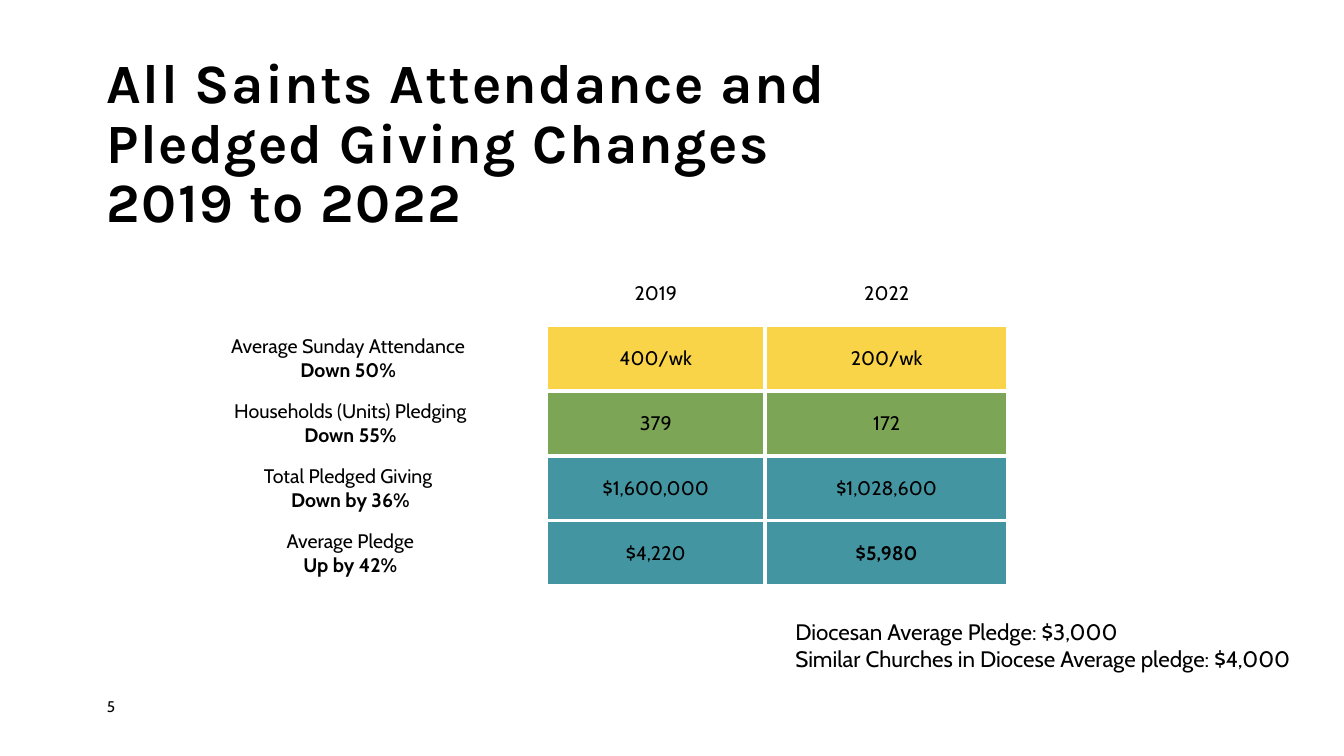
import pptx
import pptx.util
import pptx.dml.color
import pptx.enum.text
import pptx.oxml
import pptx.oxml.ns
import lxml.etree

Inches = pptx.util.Inches
ANCHOR = pptx.enum.text.MSO_ANCHOR
ALIGN = pptx.enum.text.PP_ALIGN

# Content
TITLE = "All Saints Attendance and \vPledged Giving Changes\v2019 to 2022"
PAGE_NUMBER = "5"
NOTES = ["Diocesan Average Pledge: $3,000",
         "Similar Churches in Diocese Average pledge: $4,000"]
# Each row: fill, then the lines of each cell
ROWS = [
    (None, [[], ["2019"], ["2022"]]),
    ("yellow", [["Average Sunday Attendance ", "Down 50% "], ["400/wk"], ["200/wk"]]),
    ("green", [["Households (Units) Pledging", "Down 55%"], ["379"], ["172"]]),
    ("teal", [["Total Pledged Giving ", "Down by 36%"], ["$1,600,000"], ["$1,028,600"]]),
    ("teal", [["Average Pledge", "Up by 42%"], ["$4,220"], ["$5,980"]]),
]
BOLD_VALUES = {"$5,980"}
COLUMN_WIDTHS = [3.89, 2.17, 2.41]
ROW_HEIGHT = 0.644

# Formats
COLOURS = {"black": "000000", "white": "FFFFFF", "yellow": "F9D448",
           "green": "7CA655", "teal": "4495A2"}
FORMATS = {
    "title": {"name": "Karla", "size": pptx.util.Pt(39.6), "bold": True},
    "cell": {"name": "Cabin", "size": pptx.util.Pt(14), "bold": False},
    "strong": {"name": "Cabin", "size": pptx.util.Pt(14), "bold": True},
    "page": {"name": "Cabin", "size": pptx.util.Pt(11)},
    "note": {"name": "Cabin", "size": pptx.util.Pt(16)},
}


def colour(name):
    return pptx.dml.color.RGBColor.from_string(COLOURS[name])


def write(frame, lines, styles, align=ALIGN.LEFT):
    for index, (line, style) in enumerate(zip(lines, styles)):
        para = frame.paragraphs[0] if index == 0 else frame.add_paragraph()
        para.text = line
        para.alignment = align
        for span in para.runs:
            for key, value in FORMATS[style].items():
                setattr(span.font, key, value)
            span.font.color.rgb = colour("black")
    return frame


def add_text(page, place, lines, style, margin=None, anchor=ANCHOR.TOP):
    box = page.shapes.add_textbox(*map(Inches, place))
    frame = box.text_frame
    frame.word_wrap = True
    frame.vertical_anchor = anchor
    if margin is not None:
        for side in ("left", "top", "right", "bottom"):
            setattr(frame, f"margin_{side}", Inches(margin))
    return write(frame, lines, [style] * len(lines))


def set_borders(cell, widths):
    """Widths in points for the left, right, top and bottom edges."""
    properties = cell._tc.get_or_add_tcPr()
    for index, (side, width) in enumerate(zip("LRTB", widths)):
        properties.insert(index, pptx.oxml.parse_xml(
            f'<a:ln{side} {pptx.oxml.ns.nsdecls("a")} w="{int(width * 12700)}">'
            f'<a:solidFill><a:srgbClr val="{COLOURS["white"]}"/></a:solidFill></a:ln{side}>'))


def add_giving_table(page):
    frame = page.shapes.add_table(
        len(ROWS), len(COLUMN_WIDTHS), Inches(1.53), Inches(2.59),
        Inches(sum(COLUMN_WIDTHS)), Inches(ROW_HEIGHT * len(ROWS)))
    table = frame.table
    table.first_row = table.horz_banding = False
    for column, width in zip(table.columns, COLUMN_WIDTHS):
        column.width = Inches(width)
    last = len(ROWS) - 1
    for r, (fill, cells) in enumerate(ROWS):
        table.rows[r].height = Inches(ROW_HEIGHT)
        for c, lines in enumerate(cells):
            cell = table.cell(r, c)
            cell.vertical_anchor = ANCHOR.MIDDLE
            if fill and c > 0:
                cell.fill.solid()
                cell.fill.fore_color.rgb = colour(fill)
            else:
                cell.fill.background()
            # Thin header edges, thick lines between the values
            if r == 0:
                widths = (1, 1, 1, 2.25)
            elif c == 0:
                widths = (2.25,) * 4
            else:
                widths = (2.25 if c == 1 else 3, 3,
                          2.25 if r == 1 else 3, 2.25 if r == last else 3)
            set_borders(cell, widths)
            styles = ["strong" if i > 0 or line in BOLD_VALUES else "cell"
                      for i, line in enumerate(lines)]
            write(cell.text_frame, lines, styles, ALIGN.CENTER)


def main():
    deck = pptx.Presentation()
    deck.slide_width, deck.slide_height = Inches(13.33), Inches(7.5)
    page = deck.slides.add_slide(deck.slide_layouts[6])

    # Title with tight lines and open letters
    title = add_text(page, (1.06, 0.4, 9.34, 1.93), [TITLE], "title", 0, ANCHOR.BOTTOM)
    title.paragraphs[0].line_spacing = 0.9
    for span in title.paragraphs[0].runs:
        span.font._element.set("spc", "100")

    # Table, page number and comparison notes
    add_giving_table(page)
    add_text(page, (1.06, 6.92, 0.57, 0.27), [PAGE_NUMBER], "page", 0)
    add_text(page, (7.79, 6.08, 5.75, 0.64), NOTES, "note")

    deck.save("out.pptx")


if __name__ == "__main__":
    main()
